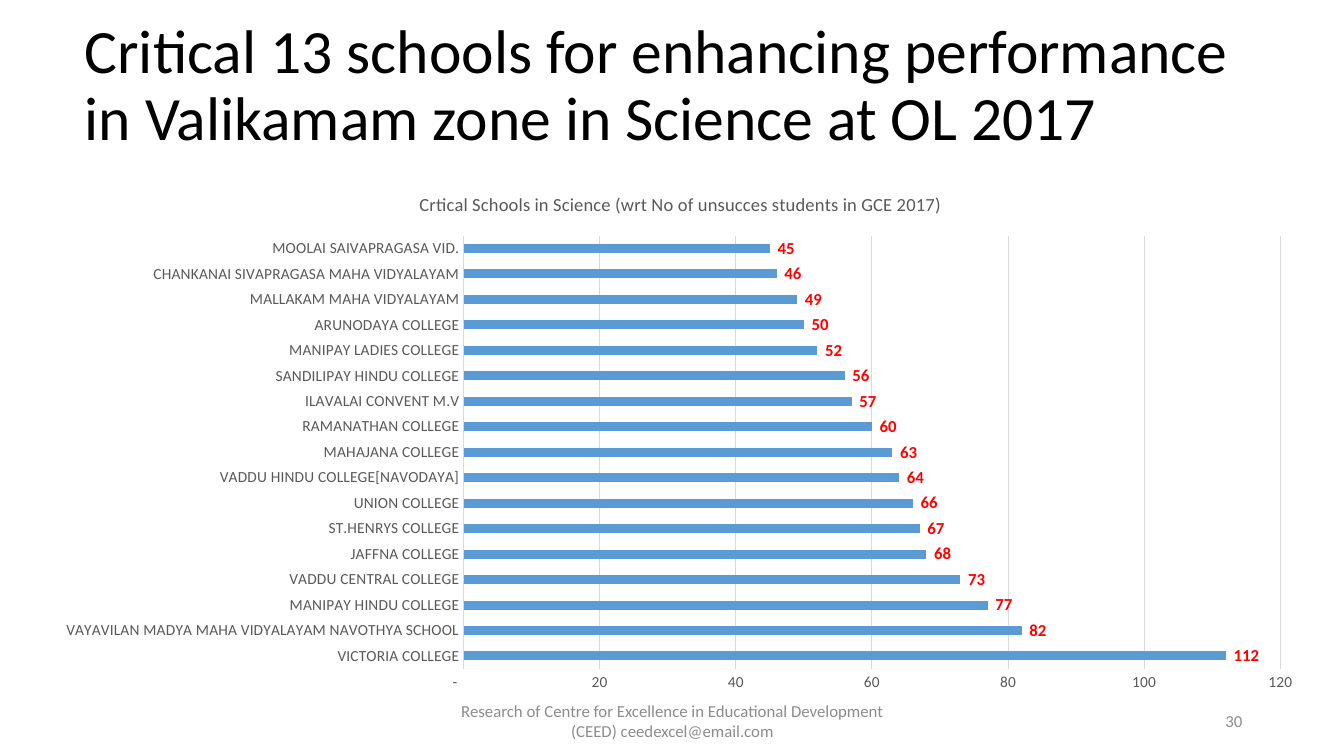
from lxml.etree import SubElement as Sub
from pptx import Presentation
from pptx.chart.data import CategoryChartData as Data
from pptx.dml.color import RGBColor as Rgb
from pptx.enum.chart import XL_CHART_TYPE as Kind, XL_LABEL_POSITION as Spot
from pptx.enum.chart import XL_TICK_MARK as Tick
from pptx.enum.text import MSO_ANCHOR as Anchor, MSO_AUTO_SIZE as Auto, PP_ALIGN as Align
from pptx.oxml.ns import qn
from pptx.util import Inches, Pt


class Theme:
    face = "Calibri"
    ink, gray, pale = "000000", "595959", "8C8C8C"
    grid, bar, mark = "D9D9D9", "5B9BD5", "FF0000"
    head, cap, note, tick = 44, 13.2, 12, 11
    number = r'_(* #,##0_);_(* \(#,##0\);_(* "-"??_);_(@_)'


SCHOOLS = [
    ("VICTORIA COLLEGE", 112),
    ("VAYAVILAN MADYA MAHA VIDYALAYAM NAVOTHYA SCHOOL", 82),
    ("MANIPAY HINDU COLLEGE", 77),
    ("VADDU CENTRAL COLLEGE", 73),
    ("JAFFNA COLLEGE", 68),
    ("ST.HENRYS COLLEGE", 67),
    ("UNION COLLEGE", 66),
    ("VADDU HINDU COLLEGE[NAVODAYA]", 64),
    ("MAHAJANA COLLEGE", 63),
    ("RAMANATHAN COLLEGE", 60),
    ("ILAVALAI CONVENT M.V", 57),
    ("SANDILIPAY HINDU COLLEGE", 56),
    ("MANIPAY LADIES COLLEGE", 52),
    ("ARUNODAYA COLLEGE", 50),
    ("MALLAKAM MAHA VIDYALAYAM", 49),
    ("CHANKANAI SIVAPRAGASA MAHA VIDYALAYAM", 46),
    ("MOOLAI SAIVAPRAGASA VID.", 45),
]


def apply(item, **form):
    for key, value in form.items():
        setattr(item, key, value)


class Page:
    def __init__(self, deck, theme):
        self.theme = theme
        self.slide = deck.slides.add_slide(deck.slide_layouts[5])

    def font(self, font, size, color, bold=False):
        apply(font, name=self.theme.face, size=Pt(size), bold=bold)
        font.color.rgb = Rgb.from_string(color)

    def line(self, line):
        line.color.rgb = Rgb.from_string(self.theme.grid)
        line.width = Pt(0.75)

    def label(self, shape, text, size, color, align, space=1.0):
        frame = shape.text_frame
        apply(frame, text=text, word_wrap=True, auto_size=Auto.NONE,
              vertical_anchor=Anchor.MIDDLE)
        para = frame.paragraphs[0]
        apply(para, alignment=align, line_spacing=space)
        self.font(para.runs[0].font, size, color)

    def title(self, text, box):
        shape = self.slide.shapes.title
        left, top, width, height = map(Inches, box)
        apply(shape, left=left, top=top, width=width, height=height)
        self.label(shape, text, self.theme.head, self.theme.ink, Align.LEFT, 0.9)

    def note(self, text, box, align):
        shape = self.slide.shapes.add_textbox(*map(Inches, box))
        self.label(shape, text, self.theme.note, self.theme.pale, align)

    def chart(self, name, rows, box, plot):
        look = self.theme
        data = Data()
        data.categories = [school for school, count in rows]
        data.add_series("Series 1", [count for school, count in rows])
        chart = self.slide.shapes.add_chart(
            Kind.BAR_CLUSTERED, *map(Inches, box), data).chart
        self.font(chart.font, look.tick, look.ink)
        apply(chart, has_legend=False, has_title=True)

        # Chart title
        frame = chart.chart_title.text_frame
        frame.text = name
        self.font(frame.paragraphs[0].runs[0].font, look.cap, look.gray)

        # Axes
        for axis in (chart.category_axis, chart.value_axis):
            apply(axis, major_tick_mark=Tick.NONE, minor_tick_mark=Tick.NONE)
            self.font(axis.tick_labels.font, look.tick, look.gray)
        self.line(chart.category_axis.format.line)
        scale = chart.value_axis
        apply(scale, minimum_scale=0, maximum_scale=120, major_unit=20,
              has_major_gridlines=True)
        self.line(scale.major_gridlines.format.line)
        scale.format.line.fill.background()
        apply(scale.tick_labels, number_format=look.number,
              number_format_is_linked=False)

        # Bars and their labels
        bars = chart.plots[0]
        apply(bars, gap_width=182, vary_by_categories=False, has_data_labels=True)
        fill = bars.series[0].format.fill
        fill.solid()
        fill.fore_color.rgb = Rgb.from_string(look.bar)
        apply(bars.data_labels, show_value=True, position=Spot.OUTSIDE_END,
              number_format=look.number, number_format_is_linked=False)
        self.font(bars.data_labels.font, look.note, look.mark, True)
        self.place(chart, plot)

    def place(self, chart, plot):
        area = chart.element.find(".//" + qn("c:plotArea"))
        for old in area.findall(qn("c:layout")):
            area.remove(old)
        layout = Sub(area, qn("c:layout"))
        area.insert(0, layout)
        manual = Sub(layout, qn("c:manualLayout"))
        parts = {"layoutTarget": "inner", "xMode": "edge", "yMode": "edge"}
        parts.update(zip("xywh", plot))
        for key, value in parts.items():
            Sub(manual, qn("c:" + key)).set("val", str(value))


def main():
    deck = Presentation()
    apply(deck, slide_width=Inches(13.33), slide_height=Inches(7.5))
    page = Page(deck, Theme)

    # Heading
    page.title("Critical 13 schools for enhancing performance in Valikamam zone "
               "in Science at OL 2017", (0.74, 0.14, 12.06, 1.45))

    # Schools chart
    page.chart("Crtical Schools in Science (wrt No of unsucces students in GCE 2017)",
               SCHOOLS, (0.42, 1.71, 12.66, 5.24), (0.33, 0.12, 0.64, 0.82))

    # Footer
    page.note("Research of Centre for Excellence in Educational Development "
              "(CEED) ceedexcel@email.com", (4.42, 6.95, 4.5, 0.4), Align.CENTER)
    page.note("30", (9.42, 6.95, 3, 0.4), Align.RIGHT)

    deck.save("out.pptx")


if __name__ == "__main__":
    main()
